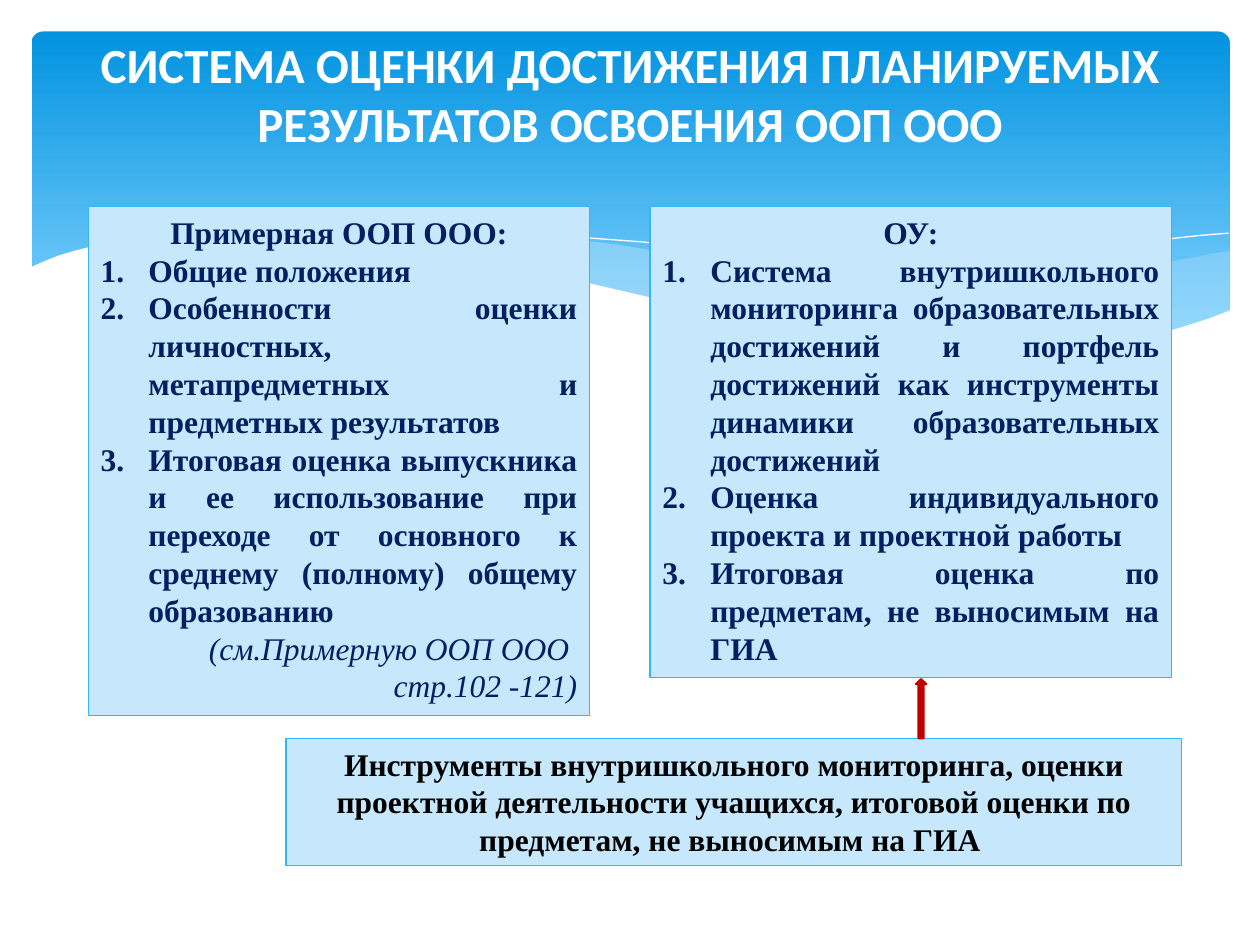
from lxml.etree import SubElement
from pptx import Presentation
from pptx.dml.color import RGBColor
from pptx.enum.shapes import MSO_SHAPE as Shape
from pptx.enum.text import MSO_ANCHOR as Anchor, MSO_AUTO_SIZE as AutoSize, PP_ALIGN as Align
from pptx.oxml.ns import qn
from pptx.util import Pt

PX = 9144  # 100 px to the inch
WHITE = RGBColor(0xFF, 0xFF, 0xFF)
BLACK = RGBColor(0x00, 0x00, 0x00)
NAVY = RGBColor(0x00, 0x20, 0x60)
PALE = RGBColor(0xC6, 0xE7, 0xFC)
SKY = RGBColor(0x31, 0xB6, 0xFD)
RED = RGBColor(0xC0, 0x00, 0x00)
TOP_BLUE = RGBColor(0x02, 0x93, 0xE0)
LOW_BLUE = RGBColor(0x83, 0xD3, 0xFE)
HANGING = 38 * PX


def add_text(frame, text, font="Times New Roman", size=18, color=NAVY, bold=True,
             italic=False, align=Align.CENTER, hanging=False, numbered=False):
    first = frame.paragraphs[0]
    paragraph = frame.add_paragraph() if first.runs else first
    paragraph.alignment = align
    run = paragraph.add_run()
    run.text = text
    run.font.name, run.font.size = font, Pt(size)
    run.font.bold, run.font.italic = bold, italic
    run.font.color.rgb = color
    props = paragraph._p.get_or_add_pPr()
    if hanging:
        props.set("marL", str(HANGING))
        props.set("indent", str(-HANGING))
    if numbered:
        SubElement(props, qn("a:buFont"), typeface="+mj-lt")
        SubElement(props, qn("a:buAutoNum"), type="arabicPeriod")


def add_wave(points, fill=None, opacity=100):
    builder = slide.shapes.build_freeform(*points[0], scale=PX)
    builder.add_line_segments(points[1:], close=fill is not None)
    wave = builder.convert_to_shape()
    wave.shadow.inherit = False
    if fill is None:
        wave.fill.background()
        wave.line.color.rgb = WHITE
        wave.line.width = 0
        return
    wave.line.fill.background()
    wave.fill.solid()
    wave.fill.fore_color.rgb = fill
    if opacity < 100:
        tint = wave._element.spPr.find(qn("a:solidFill"))[0]
        SubElement(tint, qn("a:alpha"), val=str(opacity * 1000))


prs = Presentation()
prs.slide_width, prs.slide_height = 1000 * PX, 750 * PX
slide = prs.slides.add_slide(prs.slide_layouts[6])

# Blue banner
banner = slide.shapes.add_shape(Shape.ROUNDED_RECTANGLE, 25 * PX, 25 * PX, 951 * PX, 270 * PX)
banner.adjustments[0] = 0.034
banner.shadow.inherit = False
banner.line.fill.background()
banner.fill.gradient()
banner.fill.gradient_angle = 270
for stop, color, position in zip(banner.fill.gradient_stops, (TOP_BLUE, LOW_BLUE), (0, 0.9)):
    stop.color.rgb = color
    stop.position = position

# Waves under the banner
add_wave([(975, 199), (948, 204), (921, 209), (891, 216), (861, 223), (805, 237), (753, 248),
          (706, 257), (661, 265), (691, 269), (718, 272), (745, 275), (781, 277), (814, 278),
          (844, 277), (872, 274), (897, 270), (921, 265), (942, 259), (963, 252), (976, 247),
          (976, 199)], fill=PALE, opacity=29)
add_wave([(893, 273), (866, 269), (837, 265), (807, 260), (775, 254), (741, 248), (706, 240),
          (668, 231), (629, 222), (598, 214), (569, 208), (541, 203), (514, 198), (489, 194),
          (465, 191), (442, 189), (420, 187), (399, 186), (361, 186), (328, 187), (299, 189),
          (286, 191), (323, 196), (362, 203), (404, 211), (449, 222), (491, 232), (530, 240),
          (566, 248), (601, 255), (634, 261), (665, 266), (695, 270), (722, 274), (748, 276),
          (773, 277), (807, 278), (838, 278), (867, 276), (893, 273)], fill=PALE, opacity=40)
add_wave([(309, 195), (328, 192), (353, 189), (387, 187), (433, 187), (469, 189), (510, 192),
          (556, 197), (608, 204), (665, 213), (727, 226), (795, 241), (868, 261), (907, 272)])
add_wave([(613, 257), (652, 246), (695, 235), (748, 223), (806, 210), (866, 199), (895, 194),
          (924, 190), (951, 187), (975, 185)])
add_wave([(977, 246), (959, 253), (940, 259), (920, 265), (899, 269), (875, 273), (850, 275),
          (823, 277), (793, 276), (761, 275), (726, 272), (688, 268), (647, 262), (603, 254),
          (555, 245), (503, 233), (447, 220), (418, 213), (391, 207), (365, 202), (339, 197),
          (315, 194), (292, 191), (271, 188), (250, 186), (230, 185), (211, 184), (177, 184),
          (146, 185), (119, 187), (95, 191), (75, 195), (59, 199), (46, 203), (36, 207),
          (29, 210), (23, 213), (23, 329), (977, 329)], fill=WHITE)

# Title
title = slide.shapes.add_textbox(50 * PX, 0, 900 * PX, 148 * PX).text_frame
title.word_wrap = True
title.vertical_anchor = Anchor.MIDDLE
add_text(title, "СИСТЕМА ОЦЕНКИ ДОСТИЖЕНИЯ ПЛАНИРУЕМЫХ РЕЗУЛЬТАТОВ ОСВОЕНИЯ ООП ООО",
         font="Calibri", size=28, color=WHITE)

# Panels: box, heading, heading colour, numbered items, references
panels = [
    ((70, 164, 398, 404), "Примерная ООП ООО:", NAVY,
     ["Общие положения",
      "Особенности оценки личностных, метапредметных и предметных результатов",
      "Итоговая оценка выпускника и ее использование при переходе от основного "
      "к среднему (полному) общему образованию"],
     ["(см.Примерную ООП ООО ", "стр.102 -121)"]),
    ((516, 164, 414, 374), "ОУ:", NAVY,
     ["Система внутришкольного мониторинга образовательных достижений и портфель "
      "достижений как инструменты динамики образовательных достижений",
      "Оценка индивидуального проекта и проектной работы",
      "Итоговая оценка по предметам, не выносимым на ГИА"],
     []),
    ((227, 586, 711, 101),
     "Инструменты внутришкольного мониторинга, оценки проектной деятельности учащихся, "
     "итоговой оценки по предметам, не выносимым на ГИА ", BLACK, [], []),
]
for box, heading, heading_color, items, references in panels:
    panel = slide.shapes.add_shape(Shape.RECTANGLE, *(length * PX for length in box))
    panel.shadow.inherit = False
    panel.fill.solid()
    panel.fill.fore_color.rgb = PALE
    panel.line.color.rgb = SKY
    panel.line.width = Pt(0.75)
    frame = panel.text_frame
    frame.word_wrap = True
    frame.auto_size = AutoSize.SHAPE_TO_FIT_TEXT
    frame.vertical_anchor = Anchor.TOP
    add_text(frame, heading, color=heading_color)
    for item in items:
        add_text(frame, item, align=Align.JUSTIFY, hanging=True, numbered=True)
    for reference in references:
        add_text(frame, reference, bold=False, italic=True, align=Align.RIGHT, hanging=True)

# Arrow from the tools up to the school panel
arrow = slide.shapes.add_shape(Shape.UP_ARROW, 727 * PX, 539 * PX, 8 * PX, 47 * PX)
arrow.shadow.inherit = False
arrow.fill.solid()
arrow.fill.fore_color.rgb = RED
arrow.line.color.rgb = RED
arrow.line.width = Pt(1.25)

prs.save("out.pptx")
